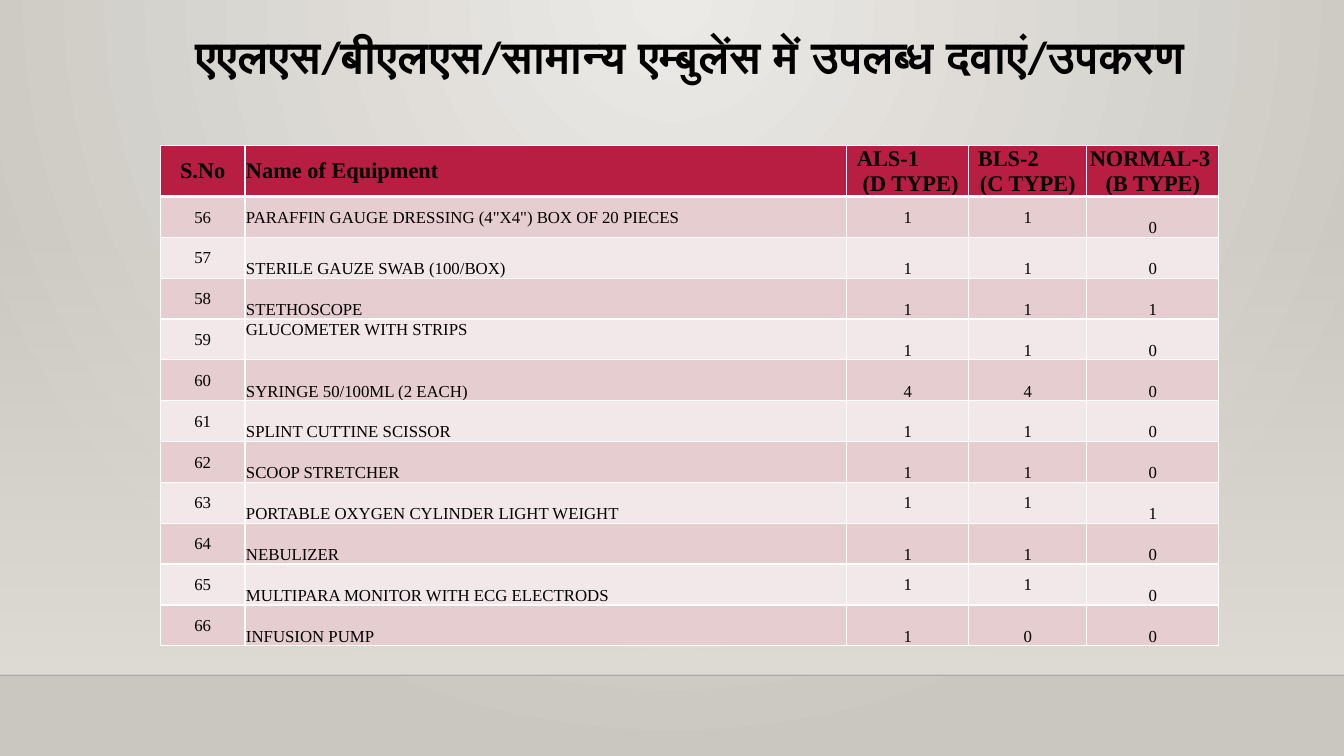
from dataclasses import dataclass

from pptx import Presentation
from pptx.dml.color import RGBColor
from pptx.enum.shapes import MSO_CONNECTOR, MSO_SHAPE
from pptx.enum.text import MSO_ANCHOR, MSO_AUTO_SIZE, PP_ALIGN
from pptx.oxml.ns import qn
from pptx.util import Inches, Pt
from lxml import etree

LINE, RECT = MSO_CONNECTOR.STRAIGHT, MSO_SHAPE.RECTANGLE
TOP, MID, LOW = MSO_ANCHOR.TOP, MSO_ANCHOR.MIDDLE, MSO_ANCHOR.BOTTOM
LEFT, CENTER = PP_ALIGN.LEFT, PP_ALIGN.CENTER
NO_FIT = MSO_AUTO_SIZE.NONE


@dataclass(frozen=True)
class Theme:
    ink: str = "000000"
    glow: str = "ECEAE7"
    edge: str = "CAC7C1"
    wall: str = "DFDBD5"
    head: str = "B71E42"
    odd: str = "E6CDCF"
    even: str = "F3E8E9"
    rule: str = "FFFFFF"
    title_font: str = "Calibri"
    table_font: str = "Times New Roman"
    title_size: int = 32
    head_size: int = 16
    body_size: int = 12


THEME = Theme()
WIDTHS = (0.84, 5.97, 1.21, 1.17, 1.31)
HEADS = ("S.No", "Name of Equipment", "ALS-1\n (D TYPE)",
         "BLS-2\n(C TYPE)", "NORMAL-3 \n(B TYPE)")
HEAD_INDENT = {2: 0.09, 3: 0.08}
FIRST = 56
ITEMS = (
    ('PARAFFIN GAUGE DRESSING (4"X4") BOX OF 20 PIECES', 1, 1, 0, MID, MID),
    ("STERILE GAUZE SWAB (100/BOX)", 1, 1, 0, LOW, LOW),
    ("STETHOSCOPE", 1, 1, 1, LOW, LOW),
    ("GLUCOMETER WITH STRIPS", 1, 1, 0, TOP, LOW),
    ("SYRINGE 50/100ML (2 EACH)", 4, 4, 0, LOW, LOW),
    ("SPLINT CUTTINE SCISSOR", 1, 1, 0, LOW, LOW),
    ("SCOOP STRETCHER", 1, 1, 0, LOW, LOW),
    ("PORTABLE OXYGEN CYLINDER LIGHT WEIGHT", 1, 1, 1, LOW, MID),
    ("NEBULIZER", 1, 1, 0, LOW, LOW),
    ("MULTIPARA MONITOR WITH ECG ELECTRODS", 1, 1, 0, LOW, MID),
    ("INFUSION PUMP", 1, 0, 0, LOW, LOW),
)


def rgb(code):
    return RGBColor.from_string(code)


def style(para, font, size, bold, align):
    para.alignment = align
    for run in para.runs:
        run.font.name = font
        run.font.size = Pt(size)
        run.font.bold = bold
        run.font.color.rgb = rgb(THEME.ink)


def blend(fill, *codes):
    fill.gradient()
    for stop, place, code in zip(fill.gradient_stops, (0, 1), codes):
        stop.position = place
        stop.color.rgb = rgb(code)


def fade(element, percent):
    color = element.find(".//" + qn("a:srgbClr"))
    etree.SubElement(color, qn("a:alpha"), val=str(percent * 1000))


def paint_back(slide):
    blend(slide.background.fill, THEME.glow, THEME.edge)
    grad = slide.element.find(".//" + qn("a:gradFill"))
    grad.remove(grad.find(qn("a:lin")))
    ring = etree.SubElement(grad, qn("a:path"), {"path": "circle"})
    etree.SubElement(ring, qn("a:fillToRect"), l="43000", t="0", r="43000", b="100000")


def add_wall(slide):
    wall = slide.shapes.add_shape(RECT, 0, Inches(2.21), Inches(13.33), Inches(4.49))
    wall.shadow.inherit = False
    wall.line.fill.background()
    blend(wall.fill, THEME.wall, THEME.wall)
    wall.fill.gradient_angle = 270
    fade(wall.element.spPr, 0)


def add_floor(slide):
    floor = slide.shapes.add_connector(LINE, 0, Inches(6.7), Inches(13.33), Inches(6.7))
    floor.line.color.rgb = rgb(THEME.ink)
    floor.line.width = Pt(1)
    props = floor.line._get_or_add_ln().getparent()
    fade(props, 20)
    etree.SubElement(props, qn("a:effectLst"))


def set_title(slide, text):
    title = slide.shapes.title
    title.left, title.top = Inches(1.59), Inches(0.29)
    title.width, title.height = Inches(10.5), Inches(1.15)
    frame = title.text_frame
    frame.text = text
    frame.word_wrap = True
    frame.auto_size = NO_FIT
    frame.vertical_anchor = TOP
    para = frame.paragraphs[0]
    para.line_spacing = 0.9
    style(para, THEME.title_font, THEME.title_size, True, CENTER)


def add_edges(cell, top, low):
    props = cell._tc.get_or_add_tcPr()
    for spot, (side, width) in enumerate((("L", 1), ("R", 1), ("T", top), ("B", low))):
        edge = etree.Element(qn("a:ln" + side), w=str(Pt(width)))
        fill = etree.SubElement(edge, qn("a:solidFill"))
        etree.SubElement(fill, qn("a:srgbClr"), val=THEME.rule)
        props.insert(spot, edge)


def fill_cell(cell, text, row, col, anchor):
    head = row == 0
    cell.text_frame.text = text
    cell.vertical_anchor = anchor
    cell.margin_left = cell.margin_right = cell.margin_top = Inches(0.01)
    cell.margin_bottom = 0
    cell.fill.solid()
    band = THEME.odd if row % 2 else THEME.even
    cell.fill.fore_color.rgb = rgb(THEME.head if head else band)
    size = THEME.head_size if head else THEME.body_size
    for para in cell.text_frame.paragraphs:
        style(para, THEME.table_font, size, head, LEFT if col == 1 else CENTER)
    if head and col in HEAD_INDENT:
        para = cell.text_frame.paragraphs[0]
        para.alignment = LEFT
        para._p.get_or_add_pPr().set("marL", str(Inches(HEAD_INDENT[col])))
    add_edges(cell, 3 if row == 1 else 1, 3 if head else 1)


def add_grid(slide):
    table = slide.shapes.add_table(len(ITEMS) + 1, len(WIDTHS), Inches(1.59),
                                   Inches(1.44), Inches(10.5), Inches(4.97)).table
    for col, width in zip(table.columns, WIDTHS):
        col.width = Inches(width)
    for row in table.rows:
        row.height = Inches(4.46) // len(ITEMS)
    table.rows[0].height = Inches(0.51)
    for col, text in enumerate(HEADS):
        fill_cell(table.cell(0, col), text, 0, col, LOW if col == 4 else MID)
    for row, (name, als, bls, normal, name_spot, count_spot) in enumerate(ITEMS, 1):
        texts = (FIRST + row - 1, name, als, bls, normal)
        spots = (MID, name_spot, count_spot, count_spot, LOW)
        for col, (text, spot) in enumerate(zip(texts, spots)):
            fill_cell(table.cell(row, col), str(text), row, col, spot)


def main():
    deck = Presentation()
    deck.slide_width, deck.slide_height = Inches(13.33), Inches(7.5)
    slide = deck.slides.add_slide(deck.slide_layouts[5])
    paint_back(slide)
    add_wall(slide)
    add_floor(slide)
    set_title(slide, "एएलएस/बीएलएस/सामान्य एम्बुलेंस में उपलब्ध दवाएं/उपकरण")
    add_grid(slide)
    deck.save("out.pptx")


if __name__ == "__main__":
    main()
